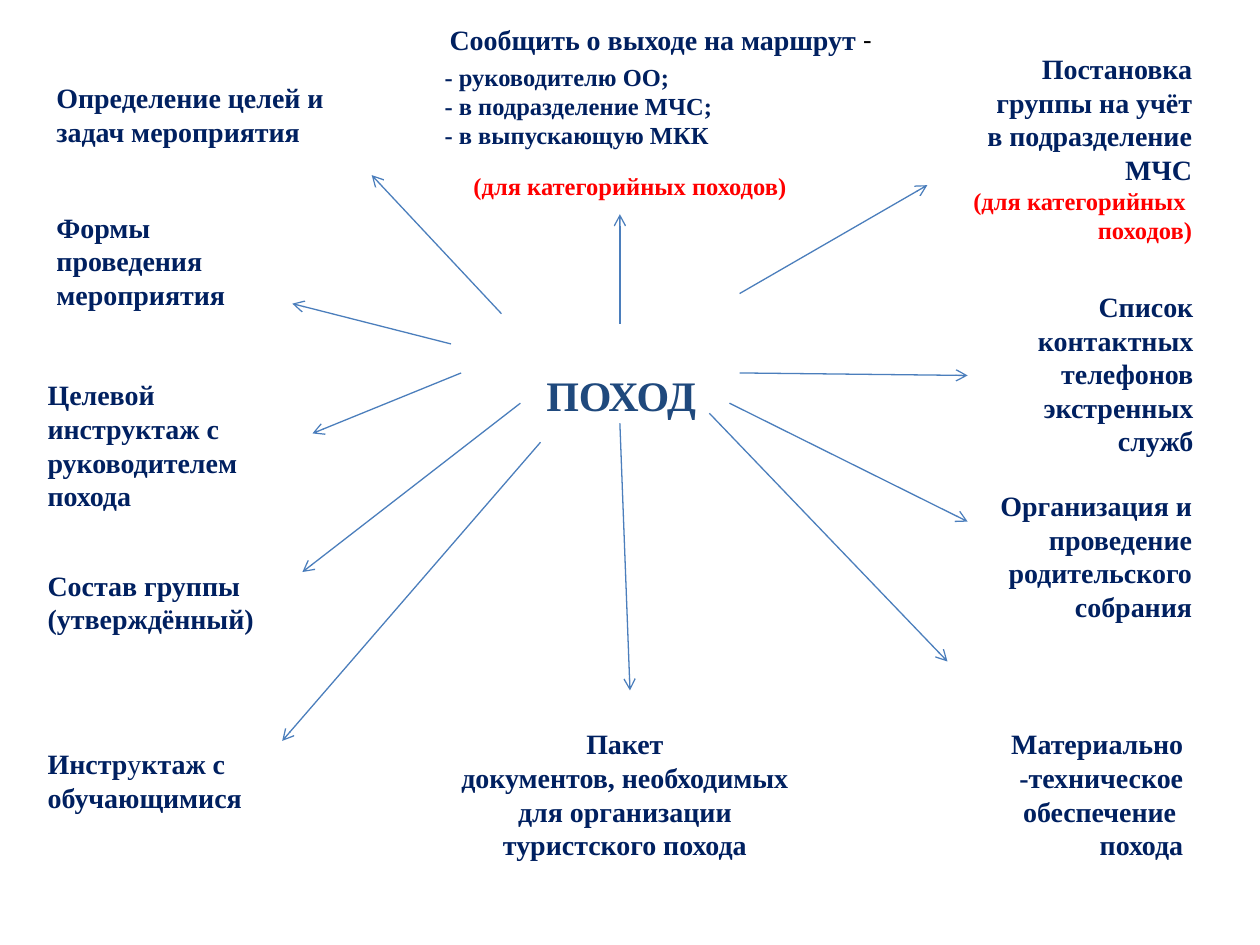
"""Build a mind-map slide of the steps in preparing a hike."""
import lxml.etree
import pptx
import pptx.util
import pptx.dml.color
import pptx.enum.shapes
import pptx.enum.text
import pptx.oxml.ns

Inches = pptx.util.Inches
ALIGN = pptx.enum.text.PP_ALIGN
COLORS = {"navy": "002060", "title": "1F497D", "red": "FF0000", "black": "000000", "arrow": "4B7EBC"}
LINE_HEIGHT = 0.0168
INSET = 0.1

HIKE = ((3.71, 2.88, 2.44), ["ПОХОД"])
NOTE = {"size": 14, "color": "red"}

LEFT_STEPS = [
    ((0.35, 0.59, 2.83), ["Определение целей и", "задач мероприятия"]),
    ((0.35, 1.62, 2.76), ["Формы", "проведения", "мероприятия"]),
    ((0.28, 2.95, 2.44), ["Целевой", "инструктаж с", "руководителем", "похода"]),
    ((0.28, 4.46, 2.2), ["Состав группы", "(утверждённый)"]),
    ((0.28, 5.88, 2.52), [[("Инстр", {}), ("у", {"bold": False}), ("ктаж с", {})], "обучающимися"]),
    ((3.47, 0.13, 3.81), [[("Сообщить о выходе на маршрут ", {}),
                           ("-", {"font": "Calibri", "color": "black", "bold": False})]]),
]
CENTRE_STEPS = [
    ((3.03, 5.72, 3.86), ["Пакет", "документов, необходимых", "для организации", "туристского похода"]),
]
RIGHT_STEPS = [
    ((6.69, 0.36, 2.87), ["Постановка", "группы на учёт", "в подразделение", "МЧС",
                          [("(для категорийных ", NOTE)], [("походов)", NOTE)]]),
    ((7.68, 2.25, 1.89), ["Список", "контактных", "телефонов", "экстренных", "служб"]),
    ((7.36, 3.83, 2.2), ["Организация и", "проведение", "родительского", "собрания"]),
    ((7.36, 5.72, 2.13), ["Материально", "-техническое", "обеспечение ", "похода"]),
]
RECIPIENTS = ((3.43, 0.44, 2.91), ["- руководителю ОО;", "- в подразделение МЧС;", "- в выпускающую МКК"])
RECIPIENTS_NOTE = ((3.29, 1.31, 3.42), ["(для категорийных походов)"])

ARROWS = [
    ((5.87, 2.33), (7.36, 1.47)), ((5.87, 2.96), (7.68, 2.98)),
    ((5.79, 3.2), (7.68, 4.14)), ((5.63, 3.28), (7.52, 5.25)),
    ((4.92, 3.36), (5, 5.48)), ((3.98, 2.49), (2.95, 1.39)),
    ((3.58, 2.73), (2.32, 2.41)), ((3.66, 2.96), (2.48, 3.44)),
    ((4.13, 3.2), (2.4, 4.54)), ((4.29, 3.51), (2.24, 5.88)),
    ((4.92, 2.57), (4.92, 1.7)),
]


def rgb(name):
    return pptx.dml.color.RGBColor.from_string(COLORS[name])


def write(slide, block, align=ALIGN.LEFT, holder=None, **style):
    (left, top, width), lines = block
    base = {"size": 16, "color": "navy", "bold": True, "font": "Times New Roman", **style}
    height = INSET + len(lines) * base["size"] * LINE_HEIGHT
    place = [Inches(length) for length in (left, top, width, height)]
    if holder is None:
        holder = slide.shapes.add_textbox(*place)
    holder.left, holder.top, holder.width, holder.height = place
    frame = holder.text_frame
    frame.word_wrap = True
    frame.auto_size = pptx.enum.text.MSO_AUTO_SIZE.NONE
    frame.vertical_anchor = pptx.enum.text.MSO_ANCHOR.TOP
    for index, line in enumerate(lines):
        paragraph = frame.paragraphs[0] if index == 0 else frame.add_paragraph()
        paragraph.alignment = align
        for words, changes in [(line, {})] if isinstance(line, str) else line:
            look = {**base, **changes}
            run = paragraph.add_run()
            run.text = words
            run.font.name = look["font"]
            run.font.size = pptx.util.Pt(look["size"])
            run.font.bold = look["bold"]
            run.font.color.rgb = rgb(look["color"])


def draw_arrow(slide, start, end):
    arrow = slide.shapes.add_connector(
        pptx.enum.shapes.MSO_CONNECTOR.STRAIGHT, *[Inches(length) for length in start + end])
    arrow.line.color.rgb = rgb("arrow")
    arrow.line.width = pptx.util.Pt(0.75)
    qn = pptx.oxml.ns.qn
    properties = arrow._element.spPr
    lxml.etree.SubElement(properties.find(qn("a:ln")), qn("a:tailEnd"), type="arrow")
    lxml.etree.SubElement(properties, qn("a:effectLst"))


def main():
    deck = pptx.Presentation()
    deck.slide_width, deck.slide_height = Inches(10), Inches(7.5)
    slide = deck.slides.add_slide(deck.slide_layouts[5])
    write(slide, HIKE, ALIGN.CENTER, slide.shapes.title, size=24, color="title")
    for align, steps in ((ALIGN.LEFT, LEFT_STEPS), (ALIGN.CENTER, CENTRE_STEPS), (ALIGN.RIGHT, RIGHT_STEPS)):
        for step in steps:
            write(slide, step, align)
    write(slide, RECIPIENTS, size=14)
    write(slide, RECIPIENTS_NOTE, ALIGN.CENTER, **NOTE)
    for start, end in ARROWS:
        draw_arrow(slide, start, end)
    deck.save("out.pptx")


if __name__ == "__main__":
    main()
